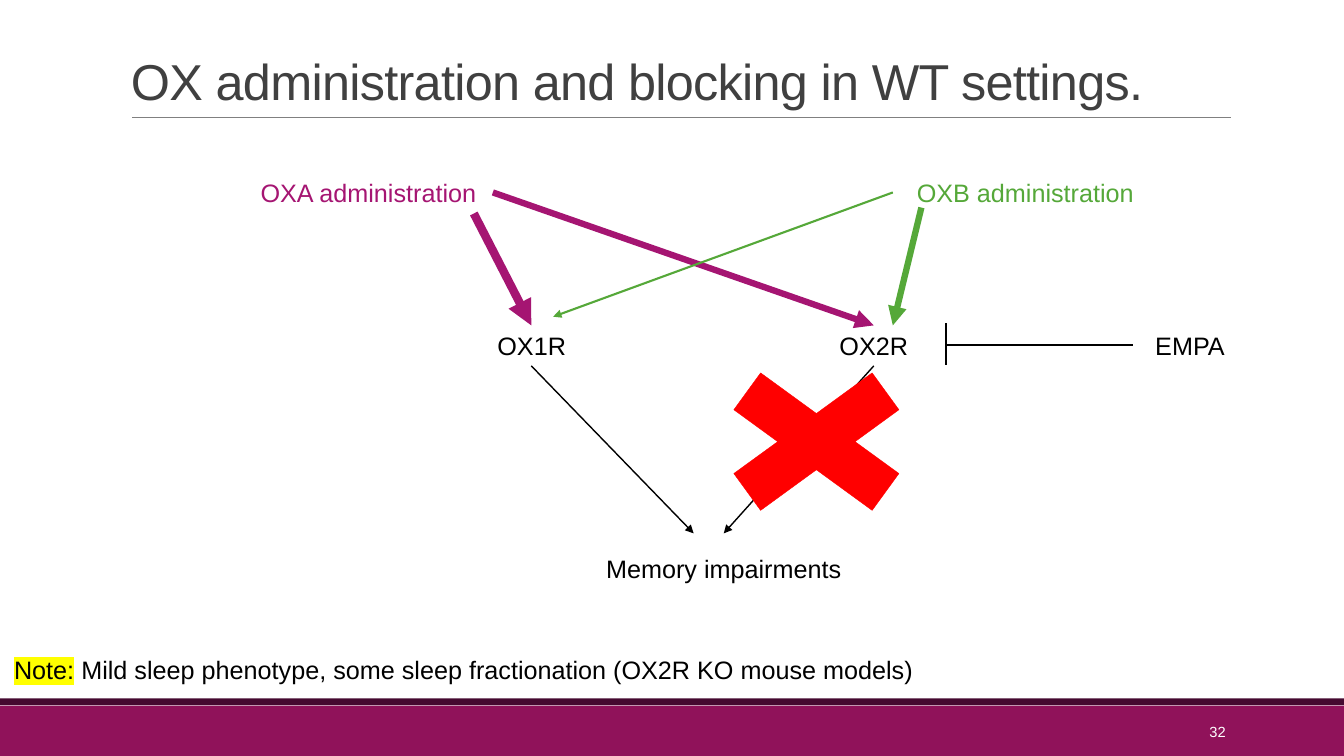
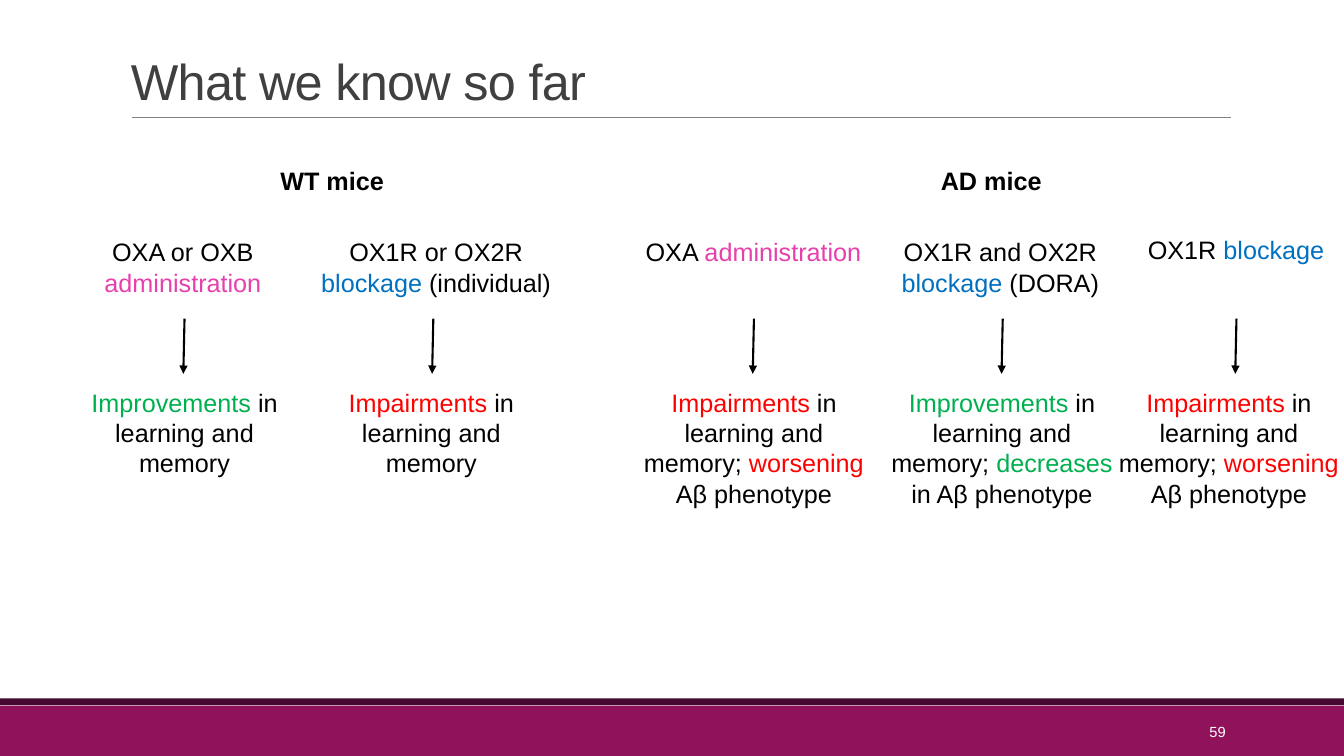
import pptx
import pptx.dml.color
import pptx.enum.shapes
import pptx.enum.text
import pptx.oxml
import pptx.oxml.ns
import pptx.util
from lxml import etree

Cm = pptx.util.Cm
Pt = pptx.util.Pt
RGBColor = pptx.dml.color.RGBColor
ALIGN = pptx.enum.text.PP_ALIGN
ANCHOR = pptx.enum.text.MSO_ANCHOR
SHAPE = pptx.enum.shapes.MSO_SHAPE
qn = pptx.oxml.ns.qn

FONT = "Arial"
WHITE = RGBColor(0xFF, 0xFF, 0xFF)
BLACK = RGBColor(0x00, 0x00, 0x00)
DARK_GREY = RGBColor(0x40, 0x40, 0x40)
RULE_GREY = RGBColor(0x80, 0x80, 0x80)
BAND_PLUM = RGBColor(0x90, 0x12, 0x5A)
BAND_DARK = RGBColor(0x45, 0x09, 0x30)
OXA_PURPLE = RGBColor(0xA5, 0x15, 0x72)
OXB_GREEN = RGBColor(0x55, 0xA8, 0x39)
PINK = RGBColor(0xE6, 0x40, 0xAC)
BLUE = RGBColor(0x00, 0x70, 0xC0)
GREEN = RGBColor(0x00, 0xB0, 0x50)
RED = RGBColor(0xFF, 0x00, 0x00)


def add_text(page, left, top, width, height, spans, size=18, align=ALIGN.CENTER, anchor=ANCHOR.TOP):
    """Add a one-paragraph text box from (text, colour) spans and return the paragraph."""
    box = page.shapes.add_textbox(Cm(left), Cm(top), Cm(width), Cm(height))
    box.text_frame.word_wrap = True
    box.text_frame.vertical_anchor = anchor
    para = box.text_frame.paragraphs[0]
    para.alignment = align
    for text, color in spans:
        span = para.add_run()
        span.text = text
        span.font.size = Pt(size)
        span.font.name = FONT
        span.font.color.rgb = color
    return para


def add_line(page, start, end, color, weight, arrow=True):
    line = page.shapes.add_connector(
        pptx.enum.shapes.MSO_CONNECTOR.STRAIGHT,
        Cm(start[0]), Cm(start[1]), Cm(end[0]), Cm(end[1]))
    line.line.color.rgb = color
    line.line.width = Pt(weight)
    if arrow:
        etree.SubElement(line.line._get_or_add_ln(), qn("a:tailEnd"), type="triangle")
    etree.SubElement(line._element.spPr, qn("a:effectLst"))


deck = pptx.Presentation()
deck.slide_width = Cm(33.87)
deck.slide_height = Cm(19.05)

# Shared frame: bands, rule, title and slide number
pages = []
for title, number in [("OX administration and blocking in WT settings.", "32"),
                      ("What we know so far", "59")]:
    page = deck.slides.add_slide(deck.slide_layouts[6])
    for top, height, color in [(17.78, 1.27, BAND_PLUM), (17.6, 0.17, BAND_DARK)]:
        band = page.shapes.add_shape(SHAPE.RECTANGLE, 0, Cm(top), deck.slide_width, Cm(height))
        band.shadow.inherit = False
        band.fill.solid()
        band.fill.fore_color.rgb = color
        band.line.fill.background()
    add_line(page, (3.33, 2.95), (31.01, 2.95), RULE_GREY, 0.5, arrow=False)
    para = add_text(page, 3.05, 0.79, 27.94, 2.13, [(title, DARK_GREY)], 36, ALIGN.LEFT, ANCHOR.BOTTOM)
    para.line_spacing = 0.85
    para.runs[0].font._element.set("spc", "-50")
    add_text(page, 27.51, 17.93, 3.63, 1.02, [(number, WHITE)], 10.5, ALIGN.RIGHT, ANCHOR.MIDDLE)
    pages.append(page)
pathway_page, summary_page = pages

# Pathway diagram
for left, top, width, label, color in [
    (6.15, 4.34, 6.27, "OXA administration", OXA_PURPLE),
    (22.5, 4.34, 6.68, "OXB administration", OXB_GREEN),
    (11.15, 8.2, 4.5, "OX1R", BLACK),
    (20.47, 8.2, 3.1, "OX2R", BLACK),
    (28.4, 8.2, 3.18, "EMPA", BLACK),
    (11.13, 13.82, 14.22, "Memory impairments", BLACK),
]:
    add_text(pathway_page, left, top, width, 1.02, [(label, color)])

for start, end, color, weight in [
    ((11.94, 5.38), (13.39, 8.2), OXA_PURPLE, 6),
    ((12.42, 4.85), (22.02, 8.2), OXA_PURPLE, 4.5),
    ((22.5, 4.85), (13.94, 7.98), OXB_GREEN, 1.5),
    ((23.22, 5.23), (22.5, 8.2), OXB_GREEN, 4.5),
    ((13.39, 9.22), (17.48, 13.44), BLACK, 1),
    ((22.02, 9.22), (18.24, 13.44), BLACK, 1),
]:
    add_line(pathway_page, start, end, color, weight)

# Blunt-ended inhibition line from EMPA to OX2R
add_line(pathway_page, (28.55, 8.69), (23.83, 8.69), BLACK, 1.5, arrow=False)
add_line(pathway_page, (23.83, 8.15), (23.83, 9.19), BLACK, 1.5, arrow=False)

cross = pathway_page.shapes.add_shape(SHAPE.MATH_MULTIPLY, Cm(17.22), Cm(8.69), Cm(6.71), Cm(4.88))
cross.shadow.inherit = False
cross.fill.solid()
cross.fill.fore_color.rgb = RED
cross.line.color.rgb = RED
cross.line.width = Pt(0.25)

note = add_text(pathway_page, 0, 16.36, 23.37, 1.02, [
    ("Note:", BLACK),
    (" Mild sleep phenotype, some sleep fractionation (OX2R KO mouse models)", BLACK)])
highlight = etree.Element(qn("a:highlight"))
etree.SubElement(highlight, qn("a:srgbClr"), val="FFFF00")
note.runs[0].font._element.find(qn("a:solidFill")).addnext(highlight)

# Summary columns: cause, arrow, effect
for left, group in [(6.12, "WT mice"), (22.73, "AD mice")]:
    heading = add_text(summary_page, left, 4.04, 4.5, 1.02, [(group, BLACK)])
    heading.runs[0].font.bold = True

CAUSE_WIDTH = 6.48
EFFECT_WIDTH = 6.26
administration = ("administration", PINK)
blockage = ("blockage", BLUE)
improvements = ("Improvements", GREEN)
impairments = ("Impairments", RED)
in_memory = (" in learning and memory", BLACK)
in_memory_and = (" in learning and memory; ", BLACK)
worse_phenotype = [impairments, in_memory_and, ("worsening", RED), (" Aβ phenotype", BLACK)]
better_phenotype = [improvements, in_memory_and, ("decreases", GREEN), (" in Aβ phenotype", BLACK)]

for cause_center, cause_top, arrow_x, effect_center, cause, effect in [
    (4.61, 5.84, 4.65, 4.65, [("OXA or OXB ", BLACK), administration], [improvements, in_memory]),
    (10.99, 5.84, 10.92, 10.87, [("OX1R or OX2R ", BLACK), blockage, (" (individual)", BLACK)],
     [impairments, in_memory]),
    (18.99, 5.84, 19, 19, [("OXA ", BLACK), administration], worse_phenotype),
    (25.21, 5.84, 25.27, 25.25, [("OX1R and OX2R ", BLACK), blockage, (" (DORA)", BLACK)],
     better_phenotype),
    (31.15, 5.77, 31.16, 30.97, [("OX1R ", BLACK), blockage], worse_phenotype),
]:
    add_text(summary_page, cause_center - CAUSE_WIDTH / 2, cause_top, CAUSE_WIDTH, 1.8, cause)
    add_line(summary_page, (arrow_x, 8.03), (arrow_x - 0.03, 9.42), BLACK, 1.5)
    add_text(summary_page, effect_center - EFFECT_WIDTH / 2, 9.63, EFFECT_WIDTH, 3.33, effect)

deck.save("out.pptx")
